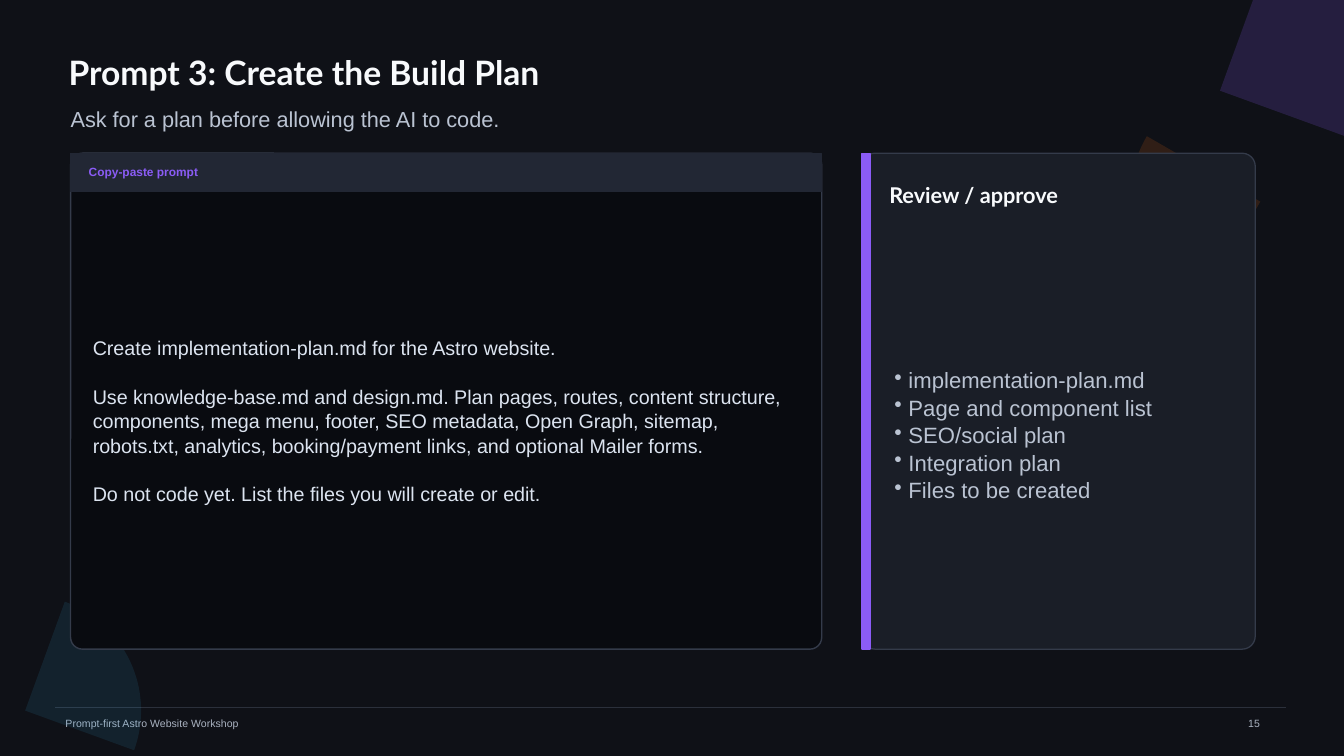
from dataclasses import dataclass

from pptx import Presentation
from pptx.dml.color import RGBColor
from pptx.enum import shapes, text
from pptx.oxml import ns, xmlchemy
from pptx.util import Inches, Pt


@dataclass(frozen=True)
class Theme:
    """Colours, fonts and type sizes of the deck."""
    background: str = "0F1117"
    heading: str = "F8FAFC"
    muted: str = "BAC3D2"
    prompt: str = "DCE4F0"
    footer: str = "AAB3C1"
    rule: str = "2B303B"
    border: str = "343B4A"
    editor: str = "090B10"
    editor_bar: str = "222734"
    card: str = "1A1E27"
    purple: str = "8B5CF6"
    orange: str = "F97316"
    blue: str = "38BDF8"
    heading_font: str = "Lato"
    body_font: str = "Arial"
    title_size: float = 24
    subtitle_size: float = 15.5
    label_size: float = 8.5
    prompt_size: float = 14.1
    bullet_size: float = 15.8
    footer_size: float = 7.5
    line_spacing: float = 1.04


THEME = Theme()
PROMPT = [
    "Create implementation-plan.md for the Astro website.",
    "Use knowledge-base.md and design.md. Plan pages, routes, content structure, "
    "components, mega menu, footer, SEO metadata, Open Graph, sitemap, robots.txt, "
    "analytics, booking/payment links, and optional Mailer forms.",
    "Do not code yet. List the files you will create or edit.",
]
DELIVERABLES = [
    "implementation-plan.md",
    "Page and component list",
    "SEO/social plan",
    "Integration plan",
    "Files to be created",
]


def add_element(parent, tag, **attributes):
    """Append a DrawingML element with the given attributes."""
    element = xmlchemy.OxmlElement(tag)
    for key, value in attributes.items():
        element.set(key, str(value))
    parent.append(element)
    return element


def add_block(slide, kind, box, fill, border=None, weight=1):
    """Draw a filled preset shape in a box, with an optional border."""
    block = slide.shapes.add_shape(kind, *map(Inches, box))
    block.shadow.inherit = False
    block.fill.solid()
    block.fill.fore_color.rgb = RGBColor.from_string(fill)
    if border:
        block.line.color.rgb = RGBColor.from_string(border)
        block.line.width = Pt(weight)
    else:
        block.line.fill.background()
    return block


def add_copy(slide, box, lines, size, color, font=THEME.body_font, bold=False,
             spacing=None, gap=0, bullet_indent=None):
    """Write paragraphs, centred vertically, in a box without margins."""
    frame = slide.shapes.add_textbox(*map(Inches, box)).text_frame
    frame.word_wrap = True
    frame.vertical_anchor = text.MSO_ANCHOR.MIDDLE
    frame.margin_left = frame.margin_right = frame.margin_top = frame.margin_bottom = 0
    frame.text = "\n".join(lines)
    for index, paragraph in enumerate(frame.paragraphs):
        if spacing:
            paragraph.line_spacing = spacing
        if index and gap:
            paragraph.space_before = Pt(gap)
        if bullet_indent:
            properties = paragraph._p.get_or_add_pPr()
            properties.set("marL", str(Inches(bullet_indent)))
            properties.set("indent", str(-Inches(bullet_indent)))
            add_element(properties, "a:buChar", char="•")
        for run in paragraph.runs:
            run.font.name = font
            run.font.size = Pt(size)
            run.font.bold = bold
            run.font.color.rgb = RGBColor.from_string(color)


def add_footer(slide, box, label, number):
    """Place the rule, the deck name and the page number."""
    left, top, width, height = box
    rule = slide.shapes.add_connector(
        shapes.MSO_CONNECTOR.STRAIGHT,
        Inches(left), Inches(top), Inches(left + width), Inches(top))
    rule.line.color.rgb = RGBColor.from_string(THEME.rule)
    rule.line.width = Pt(0.75)
    add_element(rule._element.spPr, "a:effectLst")
    add_copy(slide, (left + 0.1, top + 0.06, 5.5, height), [label],
             THEME.footer_size, THEME.footer)
    add_copy(slide, (left + 11.83, top + 0.06, 0.67, height), [number],
             THEME.footer_size, THEME.footer)


def add_backdrop(slide):
    """Scatter translucent wedges behind the content."""
    wedges = [
        ((10.2, -1, 3.8, 3.8), 20, THEME.purple, 18),
        ((11.2, 0.7, 2.6, 2.6), 210, THEME.orange, 14),
        ((-0.9, 5.9, 2.3, 2.3), 20, THEME.blue, 10),
    ]
    for box, angle, color, opacity in wedges:
        wedge = add_block(slide, shapes.MSO_SHAPE.ARC, box, color)
        wedge.rotation = angle
        tint = wedge._element.spPr.find(ns.qn("a:solidFill"))[0]
        add_element(tint, "a:alpha", val=opacity * 1000)


def add_header(slide, box, title, subtitle):
    """Place the title and the subtitle below it."""
    left, top, width, height = box
    add_copy(slide, (left, top, width, 0.52), [title], THEME.title_size,
             THEME.heading, THEME.heading_font, bold=True)
    add_copy(slide, (left + 0.02, top + height - 0.27, width, 0.27), [subtitle],
             THEME.subtitle_size, THEME.muted)


def add_prompt_panel(slide, box, label, prompt):
    """Draw the editor panel with its label bar and prompt."""
    left, top, width, height = box
    panel = add_block(slide, shapes.MSO_SHAPE.ROUNDED_RECTANGLE, box,
                      THEME.editor, THEME.border)
    panel.adjustments[0] = 0.024
    add_block(slide, shapes.MSO_SHAPE.RECTANGLE, (left, top, width, 0.38),
              THEME.editor_bar, THEME.editor_bar)
    add_copy(slide, (left + 0.18, top + 0.12, width - 0.36, 0.13), [label],
             THEME.label_size, THEME.purple, bold=True)
    add_copy(slide, (left + 0.22, top + 0.55, width - 0.44, height - 0.72), prompt,
             THEME.prompt_size, THEME.prompt, spacing=THEME.line_spacing, gap=16.9)


def add_review_card(slide, box, heading, items):
    """Draw the card with its accent edge, heading and bullets."""
    left, top, width, height = box
    card = add_block(slide, shapes.MSO_SHAPE.ROUNDED_RECTANGLE, box,
                     THEME.card, THEME.border, 0.9)
    card.adjustments[0] = 0.033
    add_block(slide, shapes.MSO_SHAPE.RECTANGLE, (left, top, 0.08, height),
              THEME.purple, THEME.purple)
    add_copy(slide, (left + 0.27, top + 0.27, width - 0.48, 0.28), [heading],
             THEME.subtitle_size, THEME.heading, THEME.heading_font, bold=True)
    add_copy(slide, (left + 0.32, top + 0.82, width - 0.55, height - 0.98), items,
             THEME.bullet_size, THEME.muted, spacing=THEME.line_spacing,
             bullet_indent=0.14)


def main():
    """Build the slide and save the deck."""
    deck = Presentation()
    deck.slide_width, deck.slide_height = Inches(13.33), Inches(7.5)
    slide = deck.slides.add_slide(deck.slide_layouts[6])
    slide.background.fill.solid()
    slide.background.fill.fore_color.rgb = RGBColor.from_string(THEME.background)
    add_footer(slide, (0.55, 7.02, 12.2, 0.2), "Prompt-first Astro Website Workshop", "15")
    add_backdrop(slide)
    add_header(slide, (0.68, 0.45, 10.6, 0.86), "Prompt 3: Create the Build Plan",
               "Ask for a plan before allowing the AI to code.")
    add_prompt_panel(slide, (0.7, 1.52, 7.45, 4.92), "Copy-paste prompt", PROMPT)
    add_review_card(slide, (8.55, 1.52, 3.9, 4.92), "Review / approve", DELIVERABLES)
    deck.save("out.pptx")


if __name__ == "__main__":
    main()
